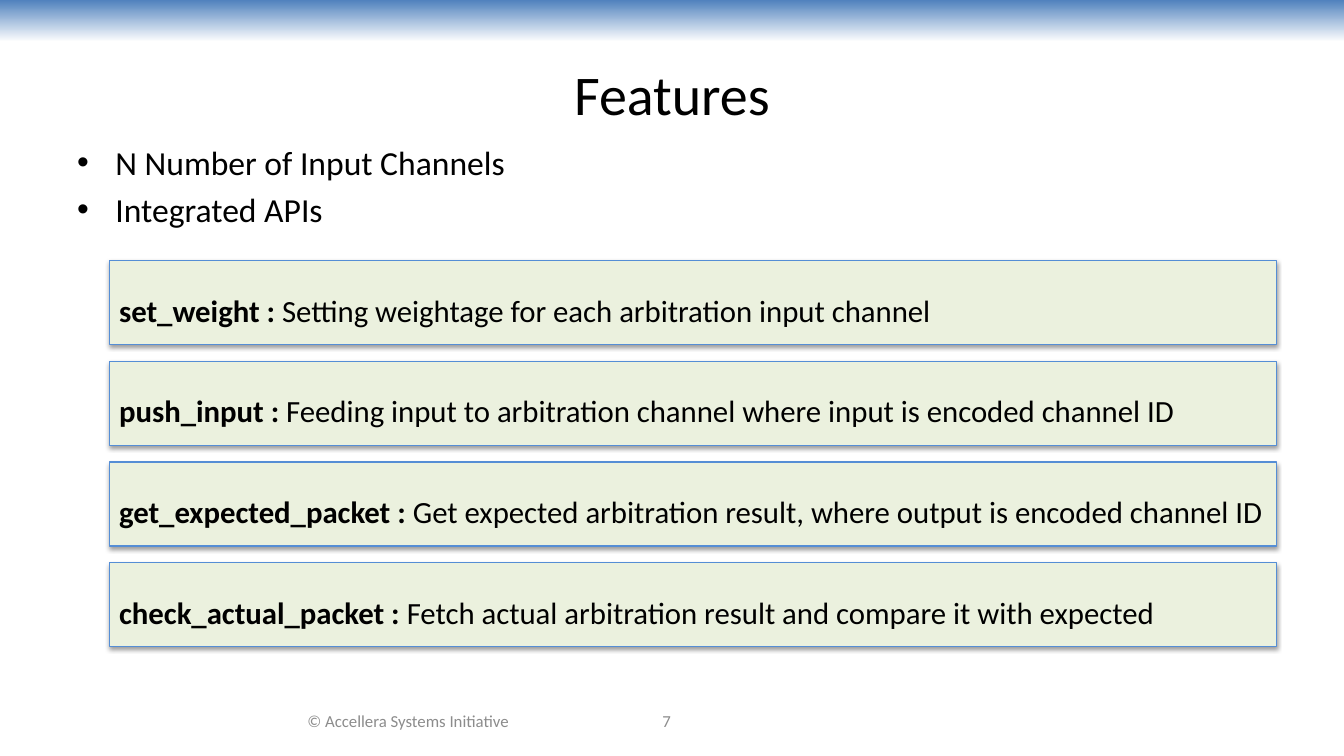
from dataclasses import dataclass

from lxml.etree import SubElement
from pptx import Presentation
from pptx.dml.color import RGBColor
from pptx.enum.shapes import MSO_SHAPE
from pptx.enum.text import MSO_ANCHOR, PP_ALIGN
from pptx.oxml.ns import qn
from pptx.util import Inches, Pt

COLORS = {
    "band": "4F81BD",
    "paper": "FFFFFF",
    "ink": "000000",
    "footer": "8C8C8C",
    "card": "EBF1DE",
    "border": "558ED5",
}
FONT = "Calibri"

# Grid of 160 columns by 90 rows, twelve to the inch
COLS, ROWS = 160, 90
CELL = Inches(1) / 12
CARD_TOP, CARD_PITCH = 31, 12


@dataclass(frozen=True)
class Box:
    col: float
    row: float
    cols: float
    rows: float

    def emu(self) -> list[int]:
        return [round(n * CELL) for n in (self.col, self.row, self.cols, self.rows)]


@dataclass(frozen=True)
class Api:
    name: str
    purpose: str


APIS = [
    Api("set_weight", "Setting weightage for each arbitration input channel"),
    Api("push_input", "Feeding input to arbitration channel where input is encoded channel ID"),
    Api("get_expected_packet", "Get expected arbitration result, where output is encoded channel ID"),
    Api("check_actual_packet", "Fetch actual arbitration result and compare it with expected"),
]
BULLETS = ["N Number of Input Channels", "Integrated APIs"]


def rgb(name: str) -> RGBColor:
    return RGBColor.from_string(COLORS[name])


def add_run(p, text: str, *, size: float, color: str = "ink", bold: bool = False) -> None:
    r = p.add_run()
    r.text = text
    r.font.name = FONT
    r.font.size = Pt(size)
    r.font.bold = bold
    r.font.color.rgb = rgb(color)


def add_text(slide, box: Box, lines: list[str], *, size: float, color: str = "ink",
             align=PP_ALIGN.LEFT, anchor=MSO_ANCHOR.MIDDLE, bullet: bool = False) -> None:
    tf = slide.shapes.add_textbox(*box.emu()).text_frame
    tf.word_wrap = True
    tf.vertical_anchor = anchor
    for i, line in enumerate(lines):
        p = tf.paragraphs[0] if i == 0 else tf.add_paragraph()
        p.alignment = align
        if i:
            p.space_before = Pt(size * 0.2)
        if bullet:
            pPr = p._p.get_or_add_pPr()
            pPr.set("marL", str(Inches(0.38)))
            pPr.set("indent", str(-Inches(0.38)))
            SubElement(pPr, qn("a:buFont"), typeface="Arial")
            SubElement(pPr, qn("a:buChar"), char="•")
        add_run(p, line, size=size, color=color)


def add_rect(slide, box: Box):
    sp = slide.shapes.add_shape(MSO_SHAPE.RECTANGLE, *box.emu())
    sp.shadow.inherit = False
    return sp


def add_band(slide, box: Box) -> None:
    sp = add_rect(slide, box)
    sp.line.fill.background()
    sp.fill.gradient()
    sp.fill.gradient_angle = 270
    for stop, name in zip(sp.fill.gradient_stops, ("band", "paper")):
        stop.color.rgb = rgb(name)


def add_shadow(sp) -> None:
    effects = sp._element.spPr.find(qn("a:effectLst"))
    shadow = SubElement(effects, qn("a:outerShdw"), blurRad=str(Pt(3.1)),
                        dist=str(Pt(1.6)), dir="5400000", rotWithShape="0")
    color = SubElement(shadow, qn("a:srgbClr"), val=COLORS["ink"])
    SubElement(color, qn("a:alpha"), val="38000")


def add_card(slide, box: Box, api: Api) -> None:
    sp = add_rect(slide, box)
    sp.fill.solid()
    sp.fill.fore_color.rgb = rgb("card")
    sp.line.color.rgb = rgb("border")
    sp.line.width = Pt(0.75)
    add_shadow(sp)
    tf = sp.text_frame
    tf.word_wrap = True
    tf.vertical_anchor = MSO_ANCHOR.TOP
    p = tf.paragraphs[0]
    p.alignment = PP_ALIGN.JUSTIFY
    p.line_spacing = 1.7
    add_run(p, f"{api.name} : ", size=22, bold=True)
    add_run(p, api.purpose, size=22)


def main() -> None:
    prs = Presentation()
    prs.slide_width, prs.slide_height = round(COLS * CELL), round(ROWS * CELL)
    s = prs.slides.add_slide(prs.slide_layouts[6])

    # Header band and title
    add_band(s, Box(0, 0, COLS, 5))
    add_text(s, Box(8, 3.6, 144, 15), ["Features"], size=40, align=PP_ALIGN.CENTER)

    # Footer
    add_text(s, Box(29.3, 83.4, 38.6, 4.8), ["© Accellera Systems Initiative"],
             size=12, color="footer", align=PP_ALIGN.CENTER)
    add_text(s, Box(64, 83.4, 30.7, 4.8), ["7"],
             size=12, color="footer", align=PP_ALIGN.CENTER)

    # Bullets
    add_text(s, Box(8, 16.3, 142, 12.4), BULLETS, size=24,
             anchor=MSO_ANCHOR.TOP, bullet=True)

    # API cards
    for i, api in enumerate(APIS):
        add_card(s, Box(13, CARD_TOP + i * CARD_PITCH, 139, 10), api)

    prs.save("out.pptx")


if __name__ == "__main__":
    main()
